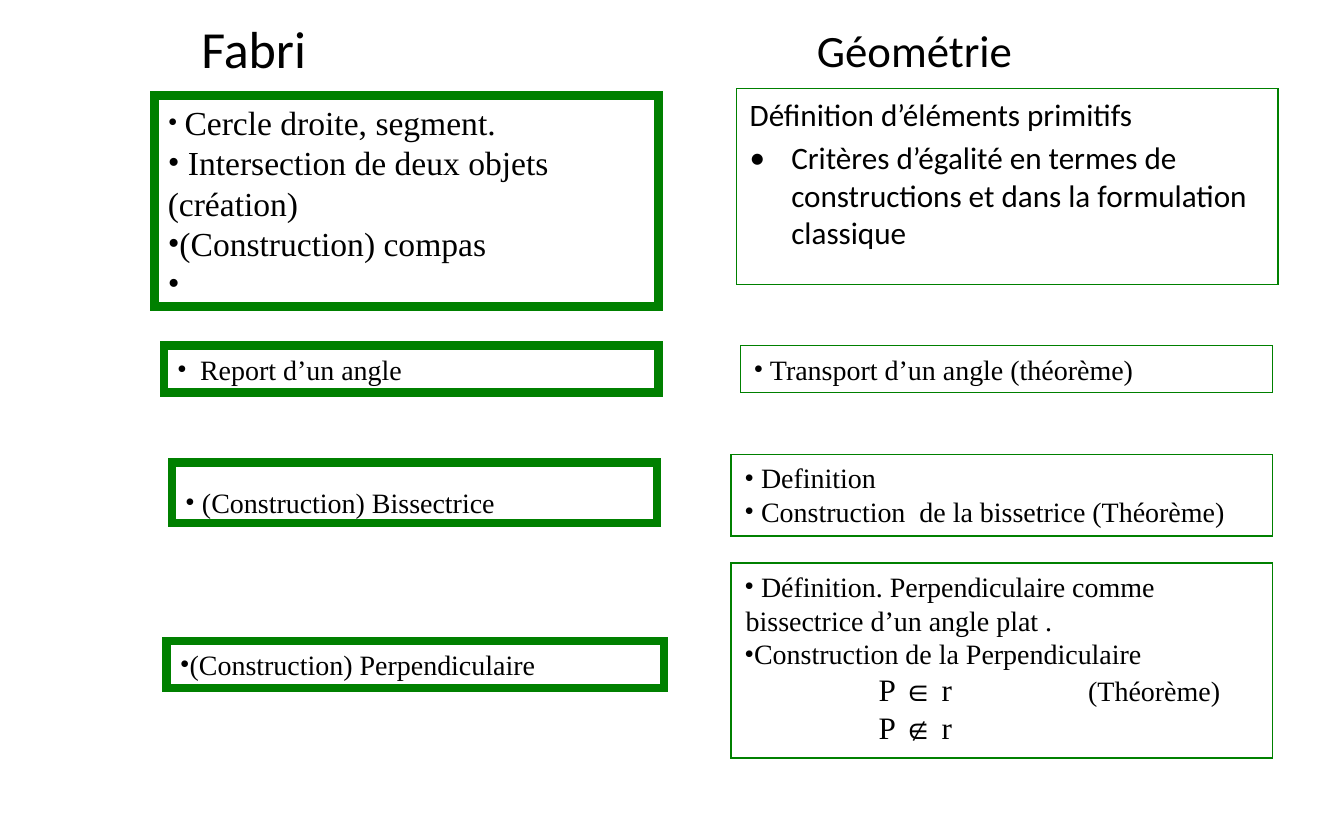
from lxml.etree import SubElement
from pptx import Presentation
from pptx.dml.color import RGBColor
from pptx.enum.shapes import MSO_SHAPE
from pptx.enum.text import MSO_ANCHOR, PP_ALIGN
from pptx.oxml.ns import qn
from pptx.util import Inches, Pt

WIDTH, HEIGHT = Inches(10), Inches(6.25)
INK, GREEN = "000000", "008000"
SERIF, SANS = "Times New Roman", "Calibri"
THICK, THIN = 4.5, 0.75
SMALL, MEDIUM, LARGE = 15, 16.7, 18
FRAME_FORMAT = {
    "word_wrap": True,
    "margin_left": Inches(0.1),
    "margin_right": Inches(0.09),
    "margin_top": Inches(0.05),
    "margin_bottom": Inches(0.05),
}


def colour(hex_value):
    return RGBColor.from_string(hex_value)


def apply(target, values):
    for name, value in values.items():
        setattr(target, name, value)


def place(left, top, width, height):
    return [int(WIDTH * left / 100), int(HEIGHT * top / 100),
            int(WIDTH * width / 100), int(HEIGHT * height / 100)]


def line(*runs, bullet=False, margin=0, hanging=0, **spacing):
    return {"runs": runs, "bullet": bullet, "margin": margin,
            "hanging": hanging, "spacing": spacing}


def item(text, size=SMALL, **options):
    return line((text, size), bullet=True, **options)


def write_line(paragraph, content, font):
    apply(paragraph, {"alignment": PP_ALIGN.LEFT, **content["spacing"]})
    for text, size in content["runs"]:
        run = paragraph.add_run()
        run.text = text
        apply(run.font, {"name": font, "size": Pt(size)})
        run.font.color.rgb = colour(INK)
    properties = paragraph._p.get_or_add_pPr()
    properties.set("marL", str(Inches(content["margin"])))
    properties.set("indent", str(-Inches(content["hanging"])))
    if content["bullet"]:
        SubElement(properties, qn("a:buFont"), typeface=font)
        SubElement(properties, qn("a:buChar"), char="•")
    else:
        SubElement(properties, qn("a:buNone"))


def write_lines(frame, lines, font, anchor):
    apply(frame, {**FRAME_FORMAT, "vertical_anchor": anchor})
    for index, content in enumerate(lines):
        paragraph = frame.add_paragraph() if index else frame.paragraphs[0]
        write_line(paragraph, content, font)


def add_heading(slide, area, text, size):
    heading = slide.shapes.add_textbox(*place(*area))
    write_lines(heading.text_frame, [line((text, size))], SANS,
                MSO_ANCHOR.MIDDLE)


def add_panel(slide, area, border, lines, font=SERIF):
    panel = slide.shapes.add_shape(MSO_SHAPE.RECTANGLE, *place(*area))
    panel.shadow.inherit = False
    panel.fill.background()
    panel.line.color.rgb = colour(GREEN)
    panel.line.width = Pt(border)
    outline = panel._element.spPr.find(qn("a:ln"))
    SubElement(outline, qn("a:miter"), lim="800000")
    write_lines(panel.text_frame, lines, font, MSO_ANCHOR.TOP)


def main():
    deck = Presentation()
    apply(deck, {"slide_width": WIDTH, "slide_height": HEIGHT})
    slide = deck.slides.add_slide(deck.slide_layouts[6])

    add_heading(slide, (14, 1.1, 30, 9.12), "Fabri", 27.9)
    add_heading(slide, (59.8, 1.4, 25, 9.12), "Géométrie", 24)

    primitives = [
        line(("Définition d’éléments primitifs", MEDIUM), space_before=Pt(3.3)),
        item("Critères d’égalité en termes de constructions et dans la "
             "formulation classique", MEDIUM, margin=0.31, hanging=0.31,
             space_before=Pt(3.3)),
    ]
    add_panel(slide, (54.8, 10.56, 40.3, 23.36), THIN, primitives, SANS)

    tools = [
        line((" ", SMALL), ("Cercle droite, segment.", LARGE), bullet=True),
        item(" Intersection de deux objets (création)", LARGE),
        item("(Construction) compas", LARGE),
        item(" ", LARGE),
    ]
    perpendicular = [
        item(" Définition. Perpendiculaire comme bissectrice d’un angle plat .",
             margin=0.01, hanging=0.01),
        item("Construction de la Perpendiculaire", margin=0.01, hanging=0.01),
        line(("P ∈ r\t\t ", MEDIUM), ("(Théorème)", SMALL), margin=1),
        line(("P ∉ r", MEDIUM), margin=1),
    ]
    panels = [
        ((11.5, 11.36, 37.5, 25.12), THICK, tools),
        ((55.1, 41.12, 39.6, 5.6), THIN,
         [item(" Transport d’un angle (théorème)")]),
        ((54.4, 54.08, 40.3, 9.76), THIN,
         [item(" Definition"),
          item(" Construction  de la bissetrice (Théorème)")]),
        ((12.2, 41.12, 36.8, 5.6), THICK,
         [item("Report d’un angle", margin=0.17, hanging=0.17)]),
        ((12.8, 55.04, 36.1, 7.2), THICK,
         [item(" (Construction) Bissectrice", line_spacing=1.5)]),
        ((12.4, 76.32, 37, 5.6), THICK,
         [item("(Construction) Perpendiculaire")]),
        ((54.4, 67.04, 40.3, 23.2), THIN, perpendicular),
    ]
    for area, border, lines in panels:
        add_panel(slide, area, border, lines)

    deck.save("out.pptx")


if __name__ == "__main__":
    main()
